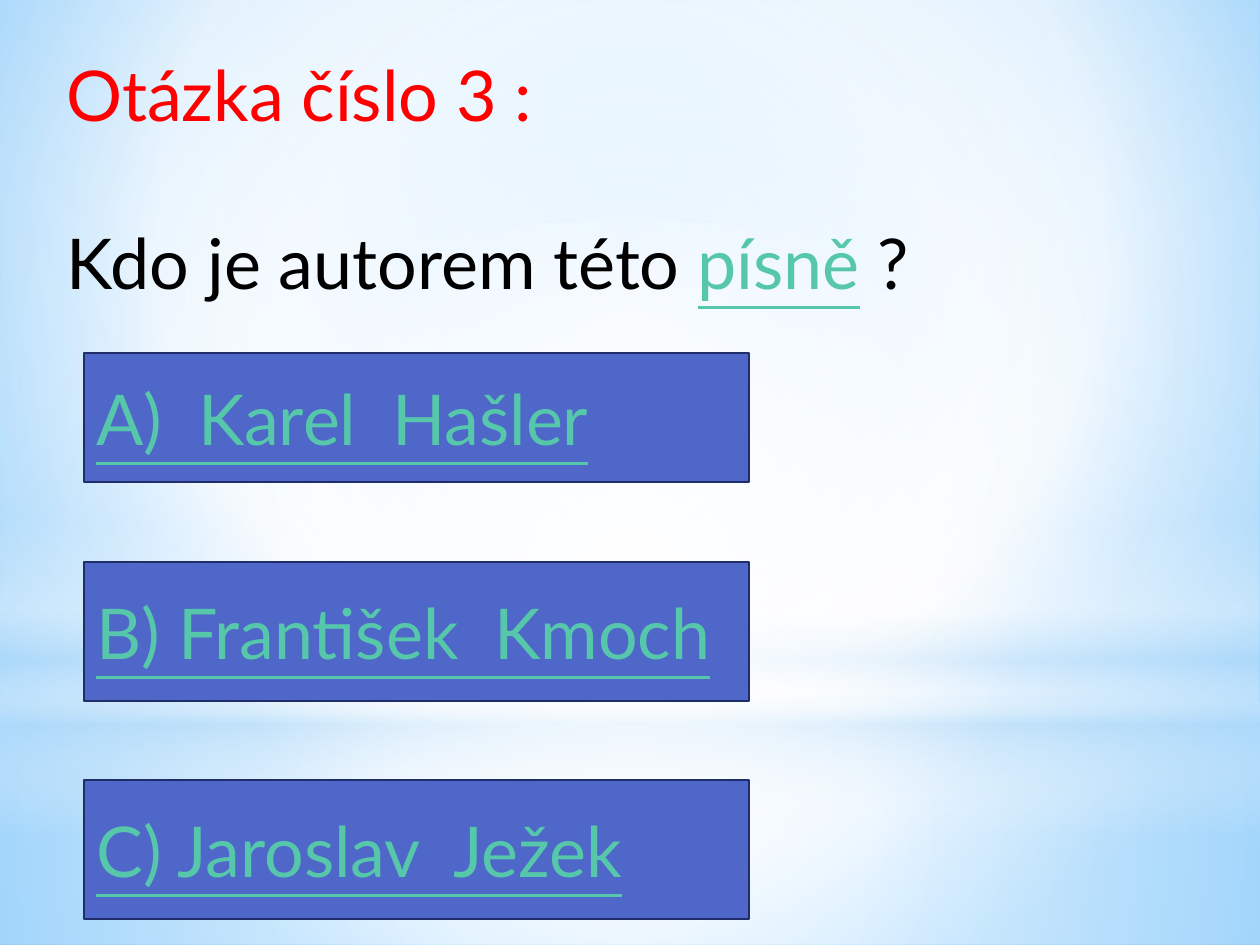
"""Build a quiz slide with one question and three answer boxes."""
from lxml import etree
from pptx import Presentation
from pptx.dml.color import RGBColor
from pptx.enum.shapes import MSO_SHAPE
from pptx.enum.text import MSO_ANCHOR, PP_ALIGN
from pptx.oxml.ns import qn
from pptx.util import Pt

RECT, OVAL = MSO_SHAPE.RECTANGLE, MSO_SHAPE.OVAL
MIDDLE, LEFT = MSO_ANCHOR.MIDDLE, PP_ALIGN.LEFT
PX = 914400 / 126
WIDTH, HEIGHT = 1260, 945
FONT, SIZE = "Lato", 40
COLORS = {"heading": "FF0000", "question": "000000", "link": "56C7AA",
          "box": "4E67C8", "border": "1F2E69", "white": "FFFFFF",
          "sky": "B4DCFA", "inner": "9ED5FF", "outer": "5BB9FF"}

HEADING = "Otázka číslo 3 :"
QUESTION = [("Kdo je autorem této ", False), ("písně", True), (" ?", False)]
QUESTION_BOX = (54, 45, 1091, 267)
ANSWERS = [("A)  Karel  Hašler", 353, 129),
           ("B) František  Kmoch", 562, 139),
           ("C) Jaroslav  Ježek", 780, 139)]
ANSWER_LEFT, ANSWER_WIDTH = 84, 665

CENTER = (50, 50, 50, 50)
BACKDROP = ([(0, "inner", 100), (60, "white", 100), (100, "outer", 100)],
            (20, 10, 20, 60))
GLOWS = [
    (RECT, (0, 703, WIDTH, 242),
     [(0, "white", 91), (37, "white", 76), (100, "sky", 79)], CENTER),
    (RECT, (0, 0, WIDTH, 703),
     [(0, "white", 89), (48, "white", 62), (100, "sky", 79)], CENTER),
    (RECT, (0, 519, WIDTH, 315),
     [(0, "white", 0), (29, "white", 30), (45, "sky", 40),
      (55, "white", 26), (65, "sky", 60), (100, "white", 0)], None),
    (OVAL, (0, 220, WIDTH, 703),
     [(0, "white", 100), (56, "white", 0)], CENTER),
]


def emu(*lengths):
    return [round(length * PX) for length in lengths]


def rgb(name):
    return RGBColor.from_string(COLORS[name])


def set_gradient(parent, stops, focus):
    """Swap the solid fill under parent for a radial or vertical gradient."""
    gradient = etree.Element(qn("a:gradFill"), rotWithShape="1")
    stop_list = etree.SubElement(gradient, qn("a:gsLst"))
    for position, color, alpha in stops:
        stop = etree.SubElement(stop_list, qn("a:gs"), pos=str(position * 1000))
        tint = etree.SubElement(stop, qn("a:srgbClr"), val=COLORS[color])
        if alpha < 100:
            etree.SubElement(tint, qn("a:alpha"), val=str(alpha * 1000))
    if focus:
        circle = etree.SubElement(gradient, qn("a:path"), path="circle")
        edges = {side: str(value * 1000) for side, value in zip("ltrb", focus)}
        etree.SubElement(circle, qn("a:fillToRect"), edges)
    else:
        etree.SubElement(gradient, qn("a:lin"), ang="5400000", scaled="0")
    parent.replace(parent.find(qn("a:solidFill")), gradient)


def add_block(slide, kind, box, fill):
    block = slide.shapes.add_shape(kind, *emu(*box))
    block.shadow.inherit = False
    block.fill.solid()
    block.fill.fore_color.rgb = rgb(fill)
    return block


def style(font, color, underline=False):
    font.name, font.size = FONT, Pt(SIZE)
    font.color.rgb = rgb(color)
    if underline:
        font.underline = True


def add_backdrop(slide):
    slide.background.fill.solid()
    slide.background.fill.fore_color.rgb = rgb("white")
    set_gradient(slide.element.find(".//" + qn("p:bgPr")), *BACKDROP)
    for kind, box, stops, focus in GLOWS:
        glow = add_block(slide, kind, box, "white")
        glow.line.fill.background()
        set_gradient(glow.element.spPr, stops, focus)


def add_question(slide):
    frame = slide.shapes.add_textbox(*emu(*QUESTION_BOX)).text_frame
    frame.word_wrap = True
    heading = frame.paragraphs[0]
    heading.text = HEADING
    style(heading.font, "heading")
    question = frame.add_paragraph()
    question.space_before = Pt(SIZE * 1.2)
    for text, linked in QUESTION:
        run = question.add_run()
        run.text = text
        style(run.font, "link" if linked else "question", linked)


def add_answers(slide):
    for text, top, height in ANSWERS:
        answer = add_block(slide, RECT, (ANSWER_LEFT, top, ANSWER_WIDTH, height), "box")
        answer.line.color.rgb = rgb("border")
        answer.line.width = Pt(1.25)
        answer.text_frame.word_wrap = True
        answer.text_frame.vertical_anchor = MIDDLE
        label = answer.text_frame.paragraphs[0]
        label.text = text
        label.alignment = LEFT
        style(label.font, "link", True)


def main():
    deck = Presentation()
    deck.slide_width, deck.slide_height = emu(WIDTH, HEIGHT)
    slide = deck.slides.add_slide(deck.slide_layouts[6])
    add_backdrop(slide)
    add_question(slide)
    add_answers(slide)
    deck.save("out.pptx")


if __name__ == "__main__":
    main()
